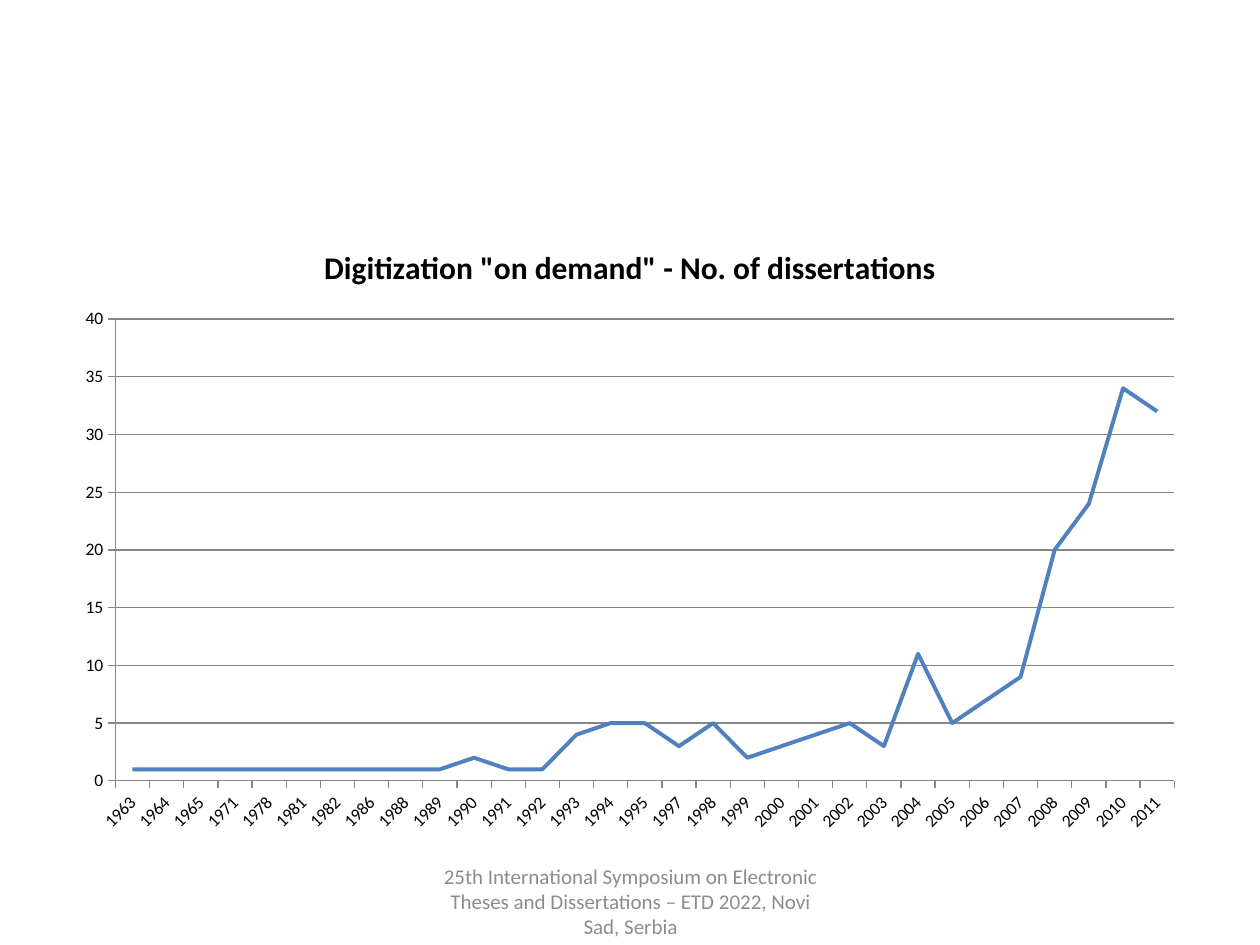
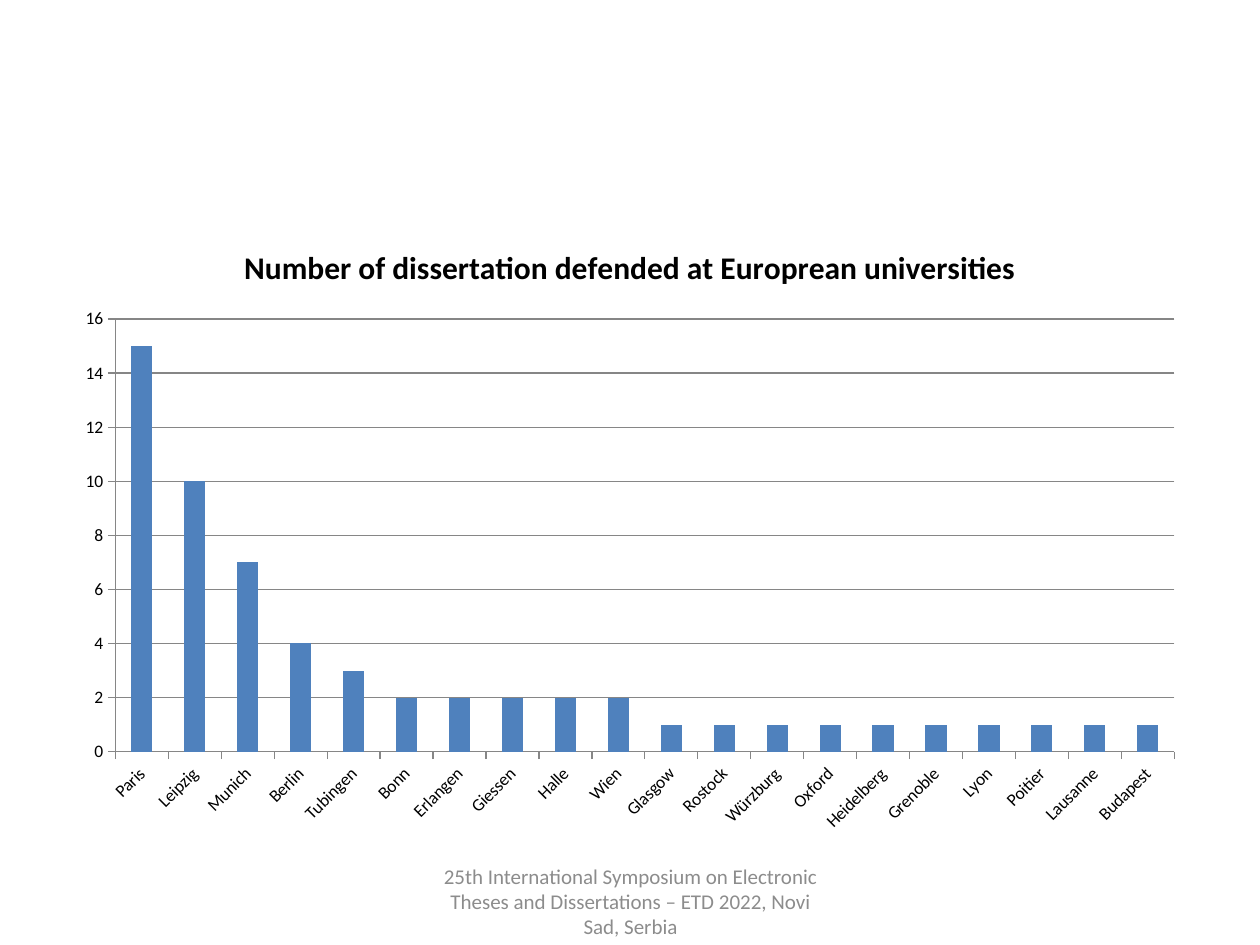
from dataclasses import dataclass

from pptx import Presentation
from pptx.chart.data import CategoryChartData
from pptx.dml.color import RGBColor
from pptx.enum.chart import XL_CHART_TYPE, XL_MARKER_STYLE, XL_TICK_MARK
from pptx.enum.text import MSO_ANCHOR, PP_ALIGN
from pptx.util import Inches, Pt


@dataclass(frozen=True)
class Theme:
    font: str = "Calibri"
    text: RGBColor = RGBColor(0, 0, 0)
    footer: RGBColor = RGBColor(0x8C, 0x8C, 0x8C)
    axis: RGBColor = RGBColor(0x86, 0x86, 0x86)
    series: RGBColor = RGBColor(0x4F, 0x81, 0xBD)
    title_size: Pt = Pt(18)
    footer_size: Pt = Pt(12)
    label_size: Pt = Pt(10)
    axis_width: Pt = Pt(0.75)
    series_width: Pt = Pt(2.25)


FOOTER = ("25th International Symposium on Electronic Theses and Dissertations "
          "– ETD 2022, Novi Sad, Serbia")

DIGITIZED = {
    "1963": 1, "1964": 1, "1965": 1, "1971": 1, "1978": 1, "1981": 1,
    "1982": 1, "1986": 1, "1988": 1, "1989": 1, "1990": 2, "1991": 1,
    "1992": 1, "1993": 4, "1994": 5, "1995": 5, "1997": 3, "1998": 5,
    "1999": 2, "2000": 3, "2001": 4, "2002": 5, "2003": 3, "2004": 11,
    "2005": 5, "2006": 7, "2007": 9, "2008": 20, "2009": 24, "2010": 34,
    "2011": 32,
}

DEFENDED = {
    "Paris": 15, "Leipzig": 10, "Munich": 7, "Berlin": 4, "Tubingen": 3,
    "Bonn": 2, "Erlangen": 2, "Giessen": 2, "Halle": 2, "Wien": 2,
    "Glasgow": 1, "Rostock": 1, "Würzburg": 1, "Oxford": 1, "Heidelberg": 1,
    "Grenoble": 1, "Lyon": 1, "Poitier": 1, "Lausanne": 1, "Budapest": 1,
}


class ChartDeck:
    def __init__(self, theme):
        self.theme = theme
        self.deck = Presentation()
        self.deck.slide_width = Inches(10)
        self.deck.slide_height = Inches(7.5)
        self.page = None

    def add_page(self):
        self.page = self.deck.slides.add_slide(self.deck.slide_layouts[6])
        self.add_footer()

    def style_font(self, font, size, color, bold=False):
        font.name = self.theme.font
        font.size = size
        font.bold = bold
        font.color.rgb = color

    def add_footer(self):
        box = self.page.shapes.add_textbox(
            Inches(3.42), Inches(6.95), Inches(3.17), Inches(0.4))
        frame = box.text_frame
        frame.word_wrap = True
        frame.vertical_anchor = MSO_ANCHOR.MIDDLE
        para = frame.paragraphs[0]
        para.alignment = PP_ALIGN.CENTER
        span = para.add_run()
        span.text = FOOTER
        self.style_font(span.font, self.theme.footer_size, self.theme.footer)

    def add_chart(self, kind, title, values):
        data = CategoryChartData()
        data.categories = list(values)
        data.add_series(title, list(values.values()))
        chart = self.page.shapes.add_chart(
            kind, Inches(0.5), Inches(1.75), Inches(9), Inches(4.95), data).chart
        self.style_font(chart.font, self.theme.label_size, self.theme.text)
        chart.has_legend = False
        self.add_chart_title(chart, title)
        self.style_axes(chart)
        chart.plots[0].vary_by_categories = False
        return chart

    def add_chart_title(self, chart, title):
        chart.has_title = True
        chart.chart_title.include_in_layout = False
        span = chart.chart_title.text_frame.paragraphs[0].add_run()
        span.text = title
        self.style_font(span.font, self.theme.title_size, self.theme.text, True)

    def style_line(self, line):
        line.color.rgb = self.theme.axis
        line.width = self.theme.axis_width

    def style_axes(self, chart):
        for axis in (chart.category_axis, chart.value_axis):
            axis.major_tick_mark = XL_TICK_MARK.OUTSIDE
            axis.minor_tick_mark = XL_TICK_MARK.NONE
            self.style_line(axis.format.line)
        chart.value_axis.has_major_gridlines = True
        self.style_line(chart.value_axis.major_gridlines.format.line)

    def add_line_chart(self, title, values):
        chart = self.add_chart(XL_CHART_TYPE.LINE, title, values)
        series = chart.plots[0].series[0]
        series.smooth = False
        series.marker.style = XL_MARKER_STYLE.NONE
        series.format.line.color.rgb = self.theme.series
        series.format.line.width = self.theme.series_width

    def add_column_chart(self, title, values):
        chart = self.add_chart(XL_CHART_TYPE.COLUMN_CLUSTERED, title, values)
        plot = chart.plots[0]
        plot.gap_width = 150
        fill = plot.series[0].format.fill
        fill.solid()
        fill.fore_color.rgb = self.theme.series


def main():
    report = ChartDeck(Theme())
    report.add_page()
    report.add_line_chart(
        'Digitization "on demand" - No. of dissertations', DIGITIZED)
    report.add_page()
    report.add_column_chart(
        "Number of dissertation defended at Europrean universities", DEFENDED)
    report.deck.save("out.pptx")


if __name__ == "__main__":
    main()
